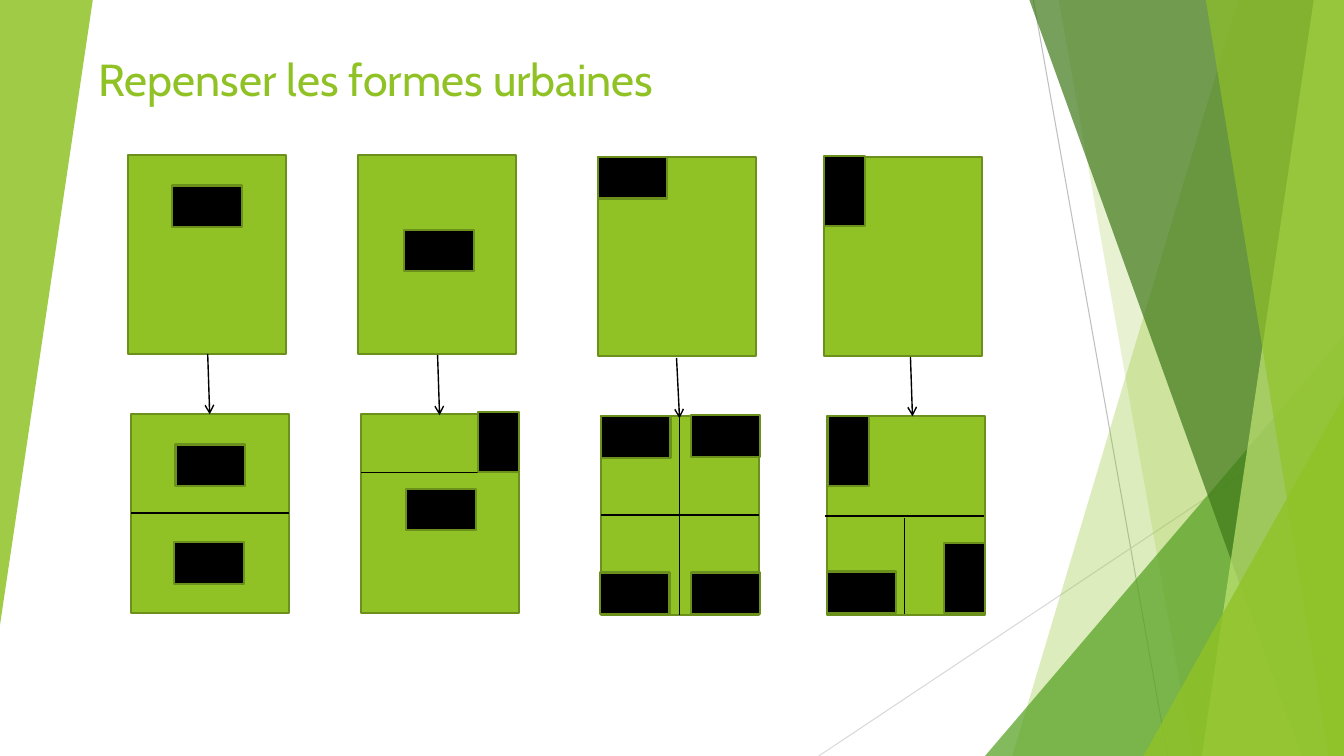
from lxml import etree
from pptx import Presentation
from pptx.dml.color import RGBColor
from pptx.enum.shapes import MSO_CONNECTOR, MSO_SHAPE
from pptx.enum.text import MSO_ANCHOR
from pptx.oxml.ns import qn
from pptx.util import Inches, Pt

RECTANGLE = MSO_SHAPE.RECTANGLE
TRIANGLE = MSO_SHAPE.ISOSCELES_TRIANGLE
STRAIGHT = MSO_CONNECTOR.STRAIGHT
BOTTOM = MSO_ANCHOR.BOTTOM

LIME = RGBColor(0x90, 0xC2, 0x26)
OLIVE = RGBColor(0x6B, 0x90, 0x1C)
GREEN = RGBColor(0x54, 0xA0, 0x21)
FOREST = RGBColor(0x3F, 0x78, 0x19)
PALE_LIME = RGBColor(0xC0, 0xE4, 0x74)
BLACK = RGBColor(0, 0, 0)
GREY = RGBColor(0xBF, 0xBF, 0xBF)
LIGHT_GREY = RGBColor(0xD9, 0xD9, 0xD9)

SLIDE_WIDTH, SLIDE_HEIGHT = 13.33, 7.5
PLOT = (1.57, 1.97)
FLAT = (0.69, 0.41)
UPRIGHT = (0.41, 0.69)
SHORT = (0.41, 0.59)
AFTER_SHIFT = (0.03, 2.57)

presentation = Presentation()
presentation.slide_width = Inches(SLIDE_WIDTH)
presentation.slide_height = Inches(SLIDE_HEIGHT)
slide = presentation.slides.add_slide(presentation.slide_layouts[6])


def add_line(x1, y1, x2, y2, color, width, arrow=False):
    line = slide.shapes.add_connector(
        STRAIGHT, Inches(x1), Inches(y1), Inches(x2), Inches(y2))
    line.line.color.rgb = color
    line.line.width = Pt(width)
    if arrow:
        etree.SubElement(line.line._get_or_add_ln(), qn("a:tailEnd"), type="arrow")
    etree.SubElement(line._element.spPr, qn("a:effectLst"))


def add_rectangle(left, top, size, color):
    """Draw a plot or a house with its olive outline."""
    rectangle = slide.shapes.add_shape(
        RECTANGLE, Inches(left), Inches(top), Inches(size[0]), Inches(size[1]))
    rectangle.shadow.inherit = False
    rectangle.fill.solid()
    rectangle.fill.fore_color.rgb = color
    rectangle.line.color.rgb = OLIVE
    rectangle.line.width = Pt(1.5)


# Background: thin lines, then translucent facets from back to front
add_line(10.25, 0, 11.58, SLIDE_HEIGHT, GREY, 0.75)
add_line(SLIDE_WIDTH, 4.03, 8.12, SLIDE_HEIGHT, LIGHT_GREY, 0.75)

# Two numbers: top and bottom x of a band that reaches the right edge.
# Five numbers: left, top, width, height and rotation of a triangle.
facets = [
    ((12.28, 10.04), LIME, 30),
    ((10.5, 11.83), LIME, 20),
    ((9.77, 3.33, 3.56, 4.17, 0), GREEN, 72),
    ((10.21, 12.91), FOREST, 70),
    ((13.03, 11.92), PALE_LIME, 70),
    ((11.96, 13.18), LIME, 65),
    ((11.34, 3.93, 1.99, 3.57, 0), LIME, 80),
    ((0, 0, 0.92, 6.2, 180), LIME, 85),
]
for geometry, color, opacity in facets:
    if len(geometry) == 2:
        top_x, bottom_x = geometry
        builder = slide.shapes.build_freeform(Inches(top_x), 0)
        builder.add_line_segments([
            (Inches(SLIDE_WIDTH), 0),
            (Inches(SLIDE_WIDTH), Inches(SLIDE_HEIGHT)),
            (Inches(bottom_x), Inches(SLIDE_HEIGHT)),
        ])
        facet = builder.convert_to_shape()
    else:
        *box, rotation = geometry
        facet = slide.shapes.add_shape(TRIANGLE, *map(Inches, box))
        facet.adjustments[0] = 1
        facet.rotation = rotation
    facet.shadow.inherit = False
    facet.line.fill.background()
    facet.fill.solid()
    facet.fill.fore_color.rgb = color
    color_element = facet._element.spPr.find(qn("a:solidFill"))[0]
    etree.SubElement(color_element, qn("a:alpha"), val=str(opacity * 1000))

# Title
title = slide.shapes.add_textbox(Inches(0.88), Inches(0.34), Inches(8.98), Inches(0.76))
title.text_frame.word_wrap = True
title.text_frame.vertical_anchor = BOTTOM
title.text_frame.text = "Repenser les formes urbaines"
title_font = title.text_frame.paragraphs[0].runs[0].font
title_font.name = "Cabin"
title_font.size = Pt(32)
title_font.color.rgb = LIME

# Each scenario: plot corner, house before, houses after, plot divisions, arrow.
# Everything but the corner is measured from the corner of its own plot.
scenarios = [
    ((1.27, 1.54), (0.44, 0.3, FLAT),
     [(0.44, 0.3, FLAT), (0.43, 1.27, FLAT)],
     [(0, 0.98, 1.57, 0.98)],
     (0.79, 1.97, 0.81, 2.57)),
    ((3.55, 1.54), (0.46, 0.74, FLAT),
     [(0.45, 0.74, FLAT), (1.16, -0.02, SHORT)],
     [(0, 0.58, 1.57, 0.58)],
     (0.79, 1.98, 0.81, 2.58)),
    ((5.93, 1.56), (0, 0, FLAT),
     [(0, 0, FLAT), (0.89, -0.01, FLAT), (-0.01, 1.55, FLAT), (0.89, 1.55, FLAT)],
     [(0, 0.98, 1.57, 0.98), (0.78, 1.97, 0.78, 0)],
     (0.78, 1.99, 0.81, 2.59)),
    ((8.17, 1.56), (0, -0.01, UPRIGHT),
     [(0.01, 0, UPRIGHT), (0, 1.54, FLAT), (1.16, 1.26, UPRIGHT)],
     [(-0.02, 0.99, 1.56, 0.99), (0.77, 1.96, 0.77, 1.01)],
     (0.86, 1.98, 0.88, 2.57)),
]
for (left, top), house_before, houses_after, divisions, arrow in scenarios:
    after_left, after_top = left + AFTER_SHIFT[0], top + AFTER_SHIFT[1]
    states = [
        (left, top, [house_before], []),
        (after_left, after_top, houses_after, divisions),
    ]
    for plot_left, plot_top, houses, plot_divisions in states:
        add_rectangle(plot_left, plot_top, PLOT, LIME)
        for x1, y1, x2, y2 in plot_divisions:
            add_line(plot_left + x1, plot_top + y1, plot_left + x2, plot_top + y2, BLACK, 1)
        for x, y, size in houses:
            add_rectangle(plot_left + x, plot_top + y, size, BLACK)
    x1, y1, x2, y2 = arrow
    add_line(left + x1, top + y1, left + x2, top + y2, BLACK, 1, arrow=True)

presentation.save("out.pptx")
